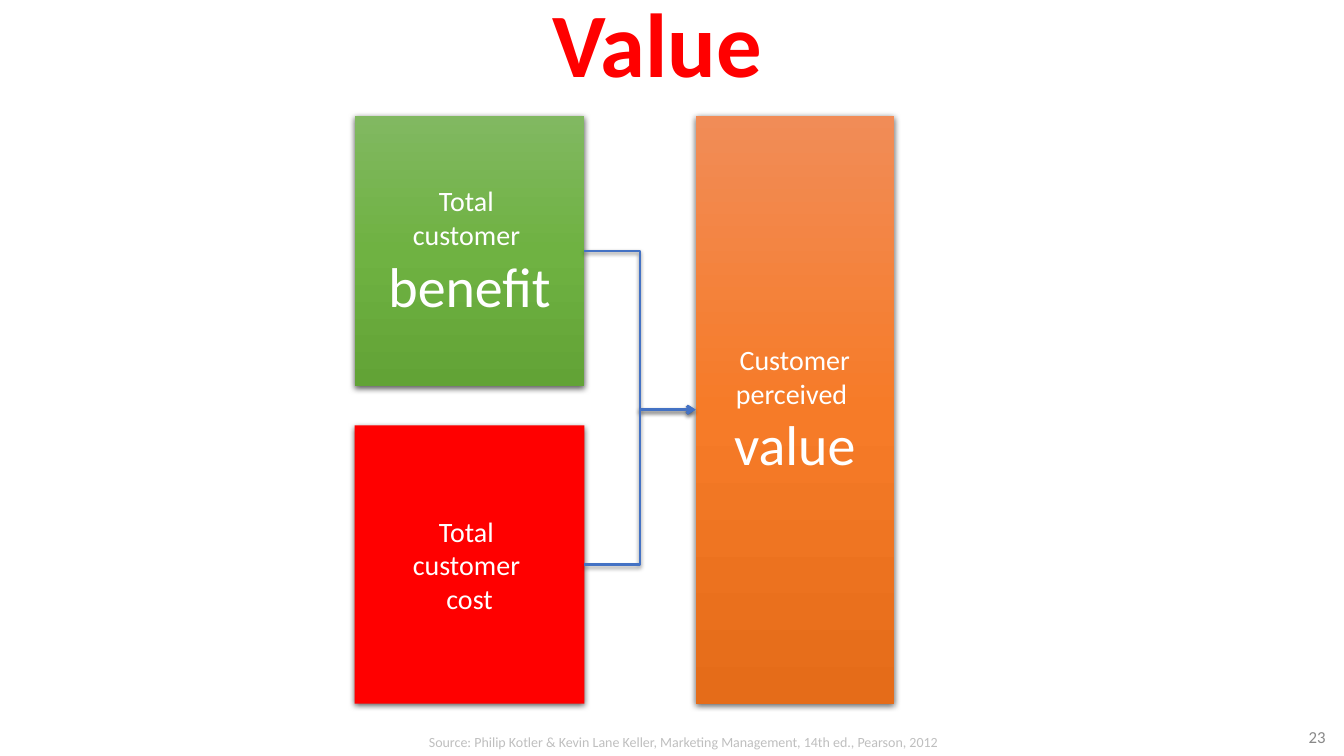
from dataclasses import dataclass

from lxml import etree
from pptx import Presentation
from pptx import util as u
from pptx.dml.color import RGBColor
from pptx.enum import shapes, text
from pptx.oxml import ns


@dataclass(frozen=True)
class Theme:
    font: str = "Calibri"
    white: str = "FFFFFF"
    red: str = "FF0000"
    blue: str = "4472C4"
    number_grey: str = "898989"
    source_grey: str = "BFBFBF"
    green_fade: tuple = ("81B861", "6FB242", "62A336")
    orange_fade: tuple = ("F18C57", "F67B28", "E56C19")
    title_size: float = 64.8
    key_size: int = 40
    label_size: int = 20
    number_size: int = 12
    source_size: int = 10


THEME = Theme()
CENTER = text.PP_ALIGN.CENTER
MIDDLE = text.MSO_ANCHOR.MIDDLE
RIGHT_SITE, LEFT_SITE = 3, 1


def apply(target, values):
    for name, value in values.items():
        setattr(target, name, value)


def add_child(parent, tag, **attributes):
    return etree.SubElement(parent, ns.qn(tag), attributes)


def cast_shadow(owner, opacity, blur, distance):
    properties = owner._element.spPr
    effects = properties.find(ns.qn("a:effectLst"))
    if effects is None:
        effects = add_child(properties, "a:effectLst")
    shadow = add_child(effects, "a:outerShdw", blurRad=str(u.Pt(blur)),
                       dist=str(u.Pt(distance)), dir="5400000", rotWithShape="0")
    black = add_child(shadow, "a:srgbClr", val="000000")
    add_child(black, "a:alpha", val=str(opacity * 1000))


def fade(fill, owner, colors):
    fill.gradient()
    fill.gradient_angle = 270
    stops = owner._element.spPr.find(".//" + ns.qn("a:gsLst"))
    stops[:] = []
    for index, color in enumerate(colors):
        stop = add_child(stops, "a:gs", pos=str(index * 50000))
        add_child(stop, "a:srgbClr", val=color)


def write(frame, parts, color, align=CENTER, anchor=MIDDLE, bold=False, spacing=1.0):
    apply(frame, {"word_wrap": True, "vertical_anchor": anchor})
    paragraph = frame.paragraphs[0]
    apply(paragraph, {"alignment": align, "line_spacing": spacing})
    for line, (words, size) in enumerate(parts):
        if line:
            paragraph.add_line_break()
        run = paragraph.add_run()
        run.text = words
        apply(run.font, {"name": THEME.font, "size": u.Pt(size), "bold": bold})
        run.font.color.rgb = RGBColor.from_string(color)


def add_label(slide, box, words, size, color, **style):
    label = slide.shapes.add_textbox(*map(u.Cm, box))
    write(label.text_frame, [(words, size)], color, **style)


def add_block(slide, box, fill, lines):
    block = slide.shapes.add_shape(shapes.MSO_SHAPE.RECTANGLE, *map(u.Cm, box))
    if isinstance(fill, tuple):
        fade(block.fill, block, fill)
    else:
        block.fill.solid()
        block.fill.fore_color.rgb = RGBColor.from_string(fill)
    block.line.fill.background()
    block.shadow.inherit = False
    cast_shadow(block, 63, 4.5, 1.5)
    write(block.text_frame, lines, THEME.white)
    return block


def add_elbow(slide, factor, result):
    elbow = slide.shapes.add_connector(shapes.MSO_CONNECTOR.ELBOW, 0, 0, 0, 0)
    elbow.begin_connect(factor, RIGHT_SITE)
    elbow.end_connect(result, LEFT_SITE)
    elbow.line.width = u.Pt(2)
    elbow.line.color.rgb = RGBColor.from_string(THEME.blue)
    add_child(elbow.line._get_or_add_ln(), "a:tailEnd", type="arrow")
    cast_shadow(elbow, 38, 3.1, 1.6)


def main():
    deck = Presentation()
    apply(deck, {"slide_width": u.Cm(33.87), "slide_height": u.Cm(19.05)})
    slide = deck.slides.add_slide(deck.slide_layouts[6])

    add_label(slide, (5.13, 0.33, 22.86, 1.75), "Value", THEME.title_size,
              THEME.red, bold=True, spacing=0.9)
    add_label(slide, (30.99, 18.24, 2.67, 0.66), "23", THEME.number_size,
              THEME.number_grey, align=text.PP_ALIGN.RIGHT)

    small, large = THEME.label_size, THEME.key_size
    total = [("Total ", small), ("customer ", small)]
    benefit = add_block(slide, (8.94, 2.92, 5.79, 6.81), THEME.green_fade,
                        total + [("benefit", large)])
    value = add_block(slide, (17.53, 2.92, 5, 14.81), THEME.orange_fade,
                      [("Customer perceived ", small), ("value", large)])
    cost = add_block(slide, (8.94, 10.72, 5.79, 7.01), THEME.red,
                     total + [("cost", small)])
    for factor in (benefit, cost):
        add_elbow(slide, factor, value)

    add_label(slide, (8.94, 18.36, 16.56, 0.69),
              "Source: Philip Kotler & Kevin Lane Keller, Marketing Management, "
              "14th ed., Pearson, 2012",
              THEME.source_size, THEME.source_grey, anchor=text.MSO_ANCHOR.TOP)
    deck.save("out.pptx")


if __name__ == "__main__":
    main()
